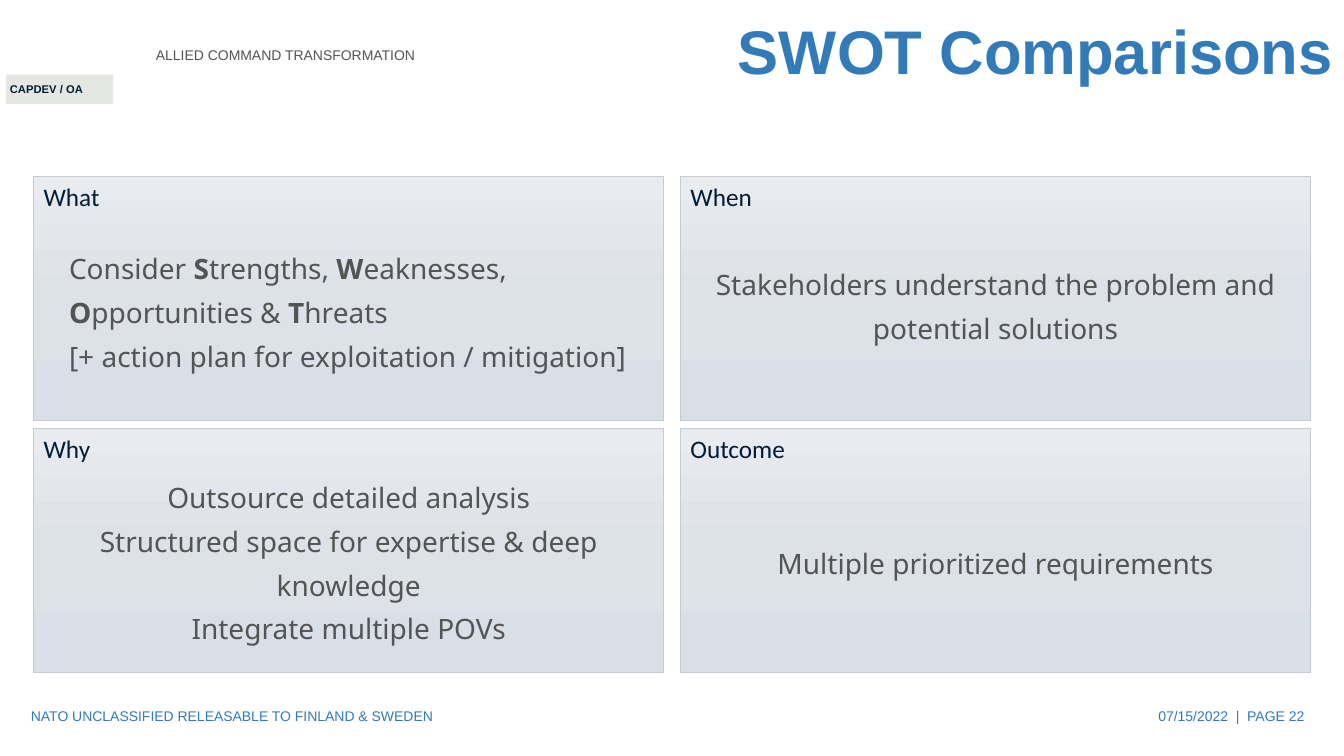
from copy import deepcopy
from pptx import Presentation
from pptx.dml.color import RGBColor
from pptx.enum.shapes import MSO_SHAPE as Shape
from pptx.enum.text import MSO_ANCHOR as Anchor, MSO_AUTO_SIZE as Fit, PP_ALIGN as Align
from pptx.util import Cm, Pt

NAVY, BLUE, GREY = "001D38", "327BB8", "545454"
STOPS = [(0, "E8EBEF"), (0.5, "DDE2E8"), (1, "D9DFE6")]

HEAD = dict(name="Calibri", size=Pt(18))
BODY = dict(name="Noto Sans", size=Pt(20))
NOTE = dict(name="Arial", size=Pt(10))
TAG = dict(name="Arial", size=Pt(8), bold=True)
TITLE = dict(name="Arial", size=Pt(44), bold=True)

# Heading, body lines (*bold*), rows of text, middle of the body in cm, alignment
PANELS = [
    ("What", ["Consider *S*trengths, *W*eaknesses, *O*pportunities & *T*hreats",
              "[+ action plan for exploitation / mitigation]"], 3, 3.29, Align.LEFT),
    ("When", ["Stakeholders understand the problem and potential solutions"],
     2, 3.15, Align.CENTER),
    ("Why", ["Outsource detailed analysis",
             "Structured space for expertise & deep knowledge",
             "Integrate multiple POVs"], 4, 3.26, Align.CENTER),
    ("Outcome", ["Multiple prioritized requirements"], 1, 3.26, Align.CENTER),
]


def color(code):
    return RGBColor.from_string(code)


def write(shape, lines, form, ink, align=Align.LEFT, anchor=Anchor.MIDDLE,
          space=1.0, wrap=True):
    """Fill a shape with paragraphs; text between asterisks is bold."""
    frame = shape.text_frame
    look = dict(word_wrap=wrap, auto_size=Fit.NONE, vertical_anchor=anchor)
    for key, val in look.items():
        setattr(frame, key, val)
    for row, line in enumerate(lines):
        para = frame.add_paragraph() if row else frame.paragraphs[0]
        para.alignment, para.line_spacing = align, space
        for part, text in enumerate(line.split("*")):
            run = para.add_run()
            run.text = text
            for key, val in form.items():
                setattr(run.font, key, val)
            run.font.color.rgb = color(ink)
            if part % 2:
                run.font.bold = True


def label(slide, box, lines, form, ink, **kind):
    write(slide.shapes.add_textbox(*map(Cm, box)), lines, form, ink, **kind)


def block(slide, box):
    shape = slide.shapes.add_shape(Shape.RECTANGLE, *map(Cm, box))
    shape.shadow.inherit = False
    return shape


def shade(fill):
    """Apply the three-stop vertical gradient."""
    fill.gradient()
    fill.gradient_angle = 270
    first = fill.gradient_stops[0]._gs
    first.addnext(deepcopy(first))
    for stop, (place, code) in zip(fill.gradient_stops, STOPS):
        stop.position = place
        stop.color.rgb = color(code)


def header(slide, box):
    left, top, width, height = box
    title = slide.shapes.title
    spot = dict(left=left + 4.65, top=top, width=width - 4.65, height=height)
    for key, val in spot.items():
        setattr(title, key, Cm(val))
    write(title, ["SWOT Comparisons"], TITLE, BLUE, align=Align.RIGHT, space=0.9)
    label(slide, (left + 3.68, top + 0.64, 15, 1.5),
          ["ALLIED COMMAND TRANSFORMATION"], NOTE, GREY)
    plate = block(slide, (left + 0.15, top + 1.88, 2.7, 0.74))
    plate.fill.solid()
    plate.fill.fore_color.rgb = color("E5E7E3")
    plate.line.fill.background()
    label(slide, (left, top + 1.93, 2.36, 0.61), ["CAPDEV / OA"], TAG, NAVY, wrap=False)


def panel(slide, box, head, lines, rows, mid, align):
    left, top, width, _ = box
    card = block(slide, box)
    shade(card.fill)
    card.line.color.rgb = color("C3CCD6")
    card.line.width = Pt(0.5)
    write(card, [head], HEAD, NAVY, anchor=Anchor.TOP)
    tall = rows * 1.1 + 0.25
    label(slide, (left + 0.64, top + mid - tall / 2, width - 1.28, tall),
          lines, BODY, GREY, align=align, space=1.3)


def grid(slide, box, gap_x=0.42, gap_y=0.2):
    left, top, width, height = box
    wide, tall = (width - gap_x) / 2, (height - gap_y) / 2
    for i, item in enumerate(PANELS):
        row, col = divmod(i, 2)
        panel(slide, (left + col * (wide + gap_x), top + row * (tall + gap_y),
                      wide, tall), *item)


def footer(slide, box):
    left, top, width, height = box
    label(slide, (left, top, 11.43, height),
          ["NATO UNCLASSIFIED RELEASABLE TO FINLAND & SWEDEN"], NOTE, BLUE)
    label(slide, (left + width - 7.62, top, 7.62, height),
          ["07/15/2022  |  PAGE 22"], NOTE, BLUE, align=Align.RIGHT)


def main():
    deck = Presentation()
    deck.slide_width, deck.slide_height = Cm(33.87), Cm(19.05)
    slide = deck.slides.add_slide(deck.slide_layouts[5])
    header(slide, (0, 0, 33.87, 2.74))
    grid(slide, (0.85, 4.45, 32.18, 12.5))
    footer(slide, (0.53, 17.53, 32.59, 1.02))
    deck.save("out.pptx")


if __name__ == "__main__":
    main()
